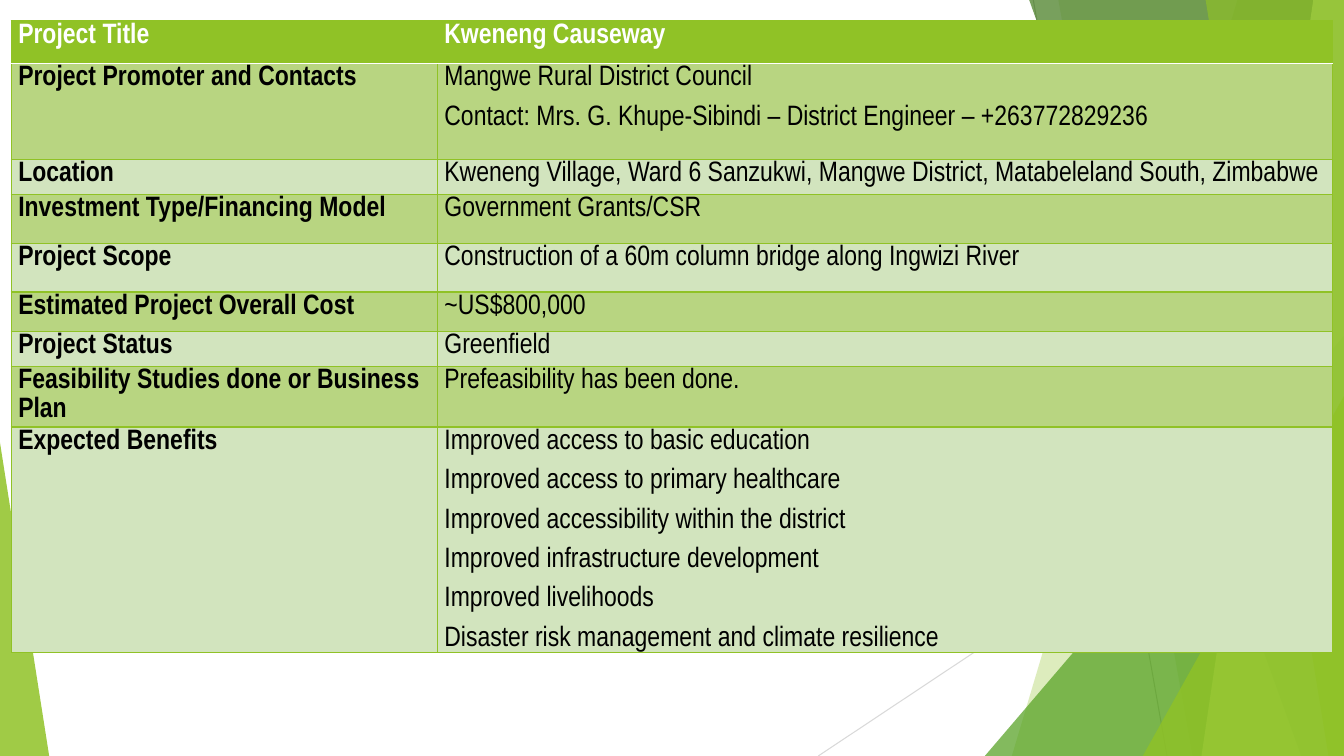
from lxml.etree import SubElement
from pptx import Presentation
from pptx.dml.color import RGBColor
from pptx.enum.shapes import MSO_CONNECTOR, MSO_SHAPE
from pptx.oxml import parse_xml
from pptx.oxml.ns import nsdecls, qn
from pptx.util import Cm, Pt

# Content
ROWS = [
    ("Project Title", ["Kweneng Causeway"], 1.07),
    ("Project Promoter and Contacts",
     ["Mangwe Rural District Council",
      "Contact: Mrs. G. Khupe-Sibindi – District Engineer – +263772829236"], 2.41),
    ("Location",
     ["Kweneng Village, Ward 6 Sanzukwi, Mangwe District, "
      "Matabeleland South, Zimbabwe"], 0.89),
    ("Investment Type/Financing Model", ["Government Grants/CSR"], 1.24),
    ("Project Scope",
     ["Construction of a 60m column bridge along Ingwizi River"], 1.22),
    ("Estimated Project Overall Cost", ["~US$800,000"], 0.99),
    ("Project Status", ["Greenfield"], 0.89),
    ("Feasibility Studies done or Business Plan",
     ["Prefeasibility has been done."], 1.52),
    ("Expected Benefits",
     ["Improved access to basic education",
      "Improved access to primary healthcare",
      "Improved accessibility within the district",
      "Improved infrastructure development",
      "Improved livelihoods",
      "Disaster risk management and climate resilience"], 5.16),
]
COLS = (10.74, 22.56)
WIDE, HIGH, TOP = 33.87, 19.05, -0.02
GREEN, DARK, LIGHT = "90C226", "B8D581", "D2E4BE"

# Lines: start, end, colour
LINES = [
    ((26.04, 0), (29.41, HIGH), "BFBFBF"),
    ((WIDE, 10.24), (20.62, HIGH), "D9D9D9"),
]
# Bands: upper left x, lower left x; wedges: x, y, width, tip side
DECOR = [
    ("band", (31.19, 25.5), GREEN, 30),
    ("band", (26.67, 30.05), GREEN, 20),
    ("wedge", (24.82, 8.46, 9.05, 1), "54A021", 72),
    ("band", (25.93, 32.79), "3F7819", 70),
    ("band", (33.1, 30.28), "C0E474", 70),
    ("band", (30.38, 33.48), GREEN, 65),
    ("wedge", (28.8, 9.98, 5.07, 1), GREEN, 80),
    ("wedge", (0, 11.15, 1.24, 0), GREEN, 85),
]


def paint(target, color):
    """Set a hex colour on a fill, a line or a font."""
    if hasattr(target, "solid"):
        target.solid()
        target.fore_color.rgb = RGBColor.from_string(color)
    elif hasattr(target, "color"):
        target.color.rgb = RGBColor.from_string(color)


def draw_line(slide, start, end, color):
    line = slide.shapes.add_connector(
        MSO_CONNECTOR.STRAIGHT, *[Cm(v) for v in start + end])
    paint(line.line, color)
    line.line.width = Pt(0.75)
    SubElement(line._element.spPr, qn("a:effectLst"))


def draw_band(slide, upper, lower):
    spots = [(Cm(x), Cm(y)) for x, y in
             ((upper, TOP), (WIDE, TOP), (WIDE, HIGH), (lower, HIGH))]
    pen = slide.shapes.build_freeform(*spots[0])
    pen.add_line_segments(spots[1:], close=True)
    return pen.convert_to_shape()


def draw_wedge(slide, x, y, width, tip):
    wedge = slide.shapes.add_shape(
        MSO_SHAPE.ISOSCELES_TRIANGLE, Cm(x), Cm(y), Cm(width), Cm(HIGH - y))
    wedge.adjustments[0] = tip
    return wedge


def finish(shape, color, alpha):
    shape.shadow.inherit = False
    shape.line.fill.background()
    paint(shape.fill, color)
    hue = shape._element.spPr.find(qn("a:solidFill"))[0]
    SubElement(hue, qn("a:alpha"), val=str(alpha * 1000))


def edge(cell, sides):
    """Add cell borders, in left, right, top, bottom order."""
    props = cell._tc.get_or_add_tcPr()
    for spot, (side, color, width) in enumerate(sides):
        props.insert(spot, parse_xml(
            f'<a:ln{side} {nsdecls("a")} w="{Pt(width)}"><a:solidFill>'
            f'<a:srgbClr val="{color}"/></a:solidFill></a:ln{side}>'))


def fill_cell(cell, lines, fill, ink, bold):
    cell.margin_left = cell.margin_right = Cm(0.18)
    cell.margin_top = cell.margin_bottom = 0
    paint(cell.fill, fill)
    cell.text_frame.text = "\n".join(lines)
    for para in cell.text_frame.paragraphs:
        para.line_spacing = 1.07
        para.space_after = Pt(8)
        for run in para.runs:
            run.font.name = "Arial Narrow"
            run.font.size = Pt(20)
            run.font.bold = bold
            paint(run.font, ink)


def draw_table(slide):
    tall = sum(row[2] for row in ROWS)
    grid = slide.shapes.add_table(len(ROWS), len(COLS), Cm(0.28), Cm(0.53),
                                  Cm(sum(COLS)), Cm(tall)).table
    for col, width in zip(grid.columns, COLS):
        col.width = Cm(width)
    for i, (label, lines, height) in enumerate(ROWS):
        grid.rows[i].height = Cm(height)
        head = i == 0
        fill = GREEN if head else DARK if i % 2 else LIGHT
        ink = "FFFFFF" if head else "000000"
        white = ("FFFFFF", 1.5)
        green = (GREEN, 1)
        for j, text in enumerate(([label], lines)):
            cell = grid.cell(i, j)
            fill_cell(cell, text, fill, ink, head or j == 0)
            edge(cell, [("L", *green), ("R", *green),
                        ("T", *(white if i == 1 else green)),
                        ("B", *(white if head else green))])


def main():
    deck = Presentation()
    deck.slide_width, deck.slide_height = Cm(WIDE), Cm(HIGH)
    slide = deck.slides.add_slide(deck.slide_layouts[6])

    # Backdrop
    for line in LINES:
        draw_line(slide, *line)
    for kind, place, color, alpha in DECOR:
        draw = draw_band if kind == "band" else draw_wedge
        finish(draw(slide, *place), color, alpha)

    # Project table
    draw_table(slide)
    deck.save("out.pptx")


if __name__ == "__main__":
    main()
